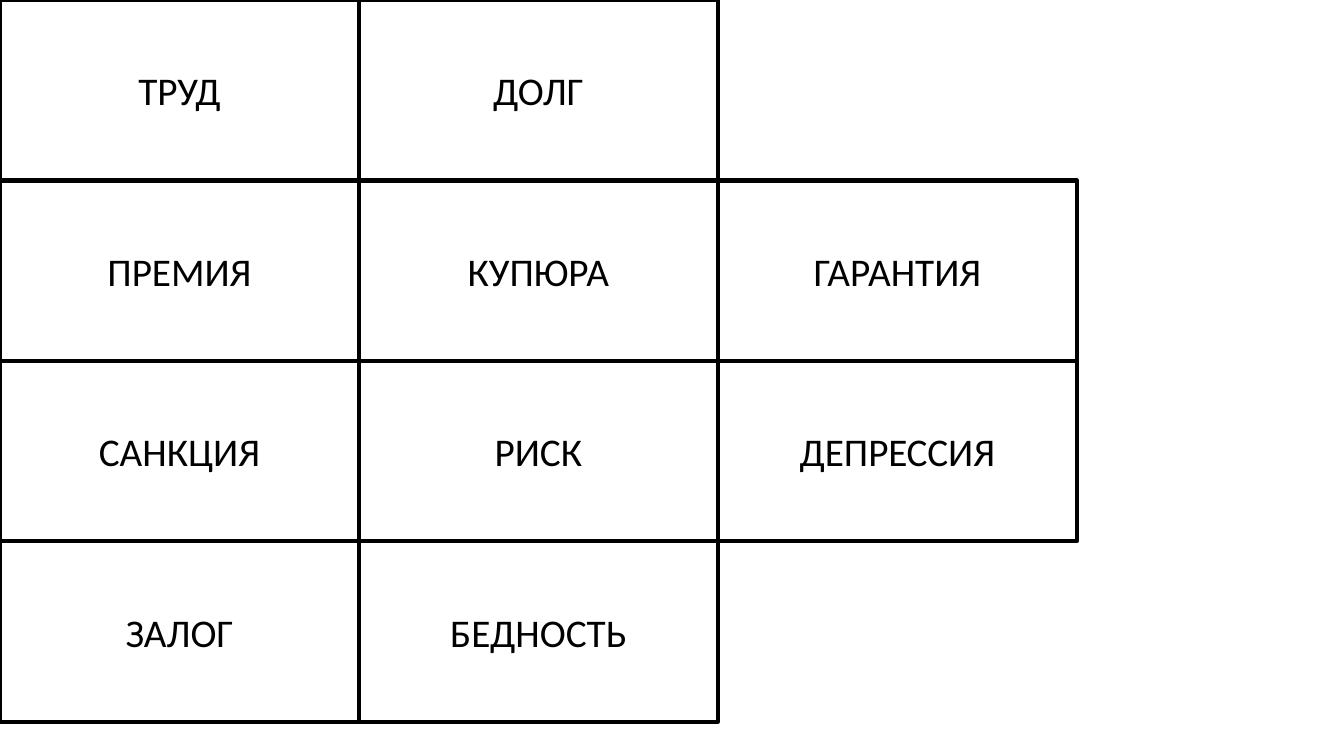
from pptx import Presentation
from pptx.dml.color import RGBColor
from pptx.enum.shapes import MSO_SHAPE
from pptx.enum.text import MSO_ANCHOR, PP_ALIGN
from pptx.util import Inches, Pt

# Content: one tuple per row of cards
WORD_ROWS = [
    ("ТРУД", "ДОЛГ"),
    ("ПРЕМИЯ", "КУПЮРА", "ГАРАНТИЯ"),
    ("САНКЦИЯ", "РИСК", "ДЕПРЕССИЯ"),
    ("ЗАЛОГ", "БЕДНОСТЬ"),
]
CARD_WIDTH, CARD_HEIGHT = 3.56, 1.79
BLACK = "000000"


def color(value):
    return RGBColor.from_string(value)


def add_card(page, word, row, column):
    box = page.shapes.add_shape(
        MSO_SHAPE.RECTANGLE,
        Inches(column * CARD_WIDTH), Inches(row * CARD_HEIGHT),
        Inches(CARD_WIDTH), Inches(CARD_HEIGHT))
    box.shadow.inherit = False
    box.fill.background()
    box.line.color.rgb = color(BLACK)
    box.line.width = Pt(3)

    # Centred word
    frame = box.text_frame
    frame.word_wrap = True
    frame.vertical_anchor = MSO_ANCHOR.MIDDLE
    para = frame.paragraphs[0]
    para.alignment = PP_ALIGN.CENTER
    span = para.add_run()
    span.text = word
    span.font.name = "Calibri"
    span.font.size = Pt(28)
    span.font.color.rgb = color(BLACK)


def main():
    deck = Presentation()
    deck.slide_width, deck.slide_height = Inches(13.33), Inches(7.5)
    page = deck.slides.add_slide(deck.slide_layouts[6])

    # Grid of word cards, starting in the top left corner
    for row, words in enumerate(WORD_ROWS):
        for column, word in enumerate(words):
            add_card(page, word, row, column)

    deck.save("out.pptx")


if __name__ == "__main__":
    main()
